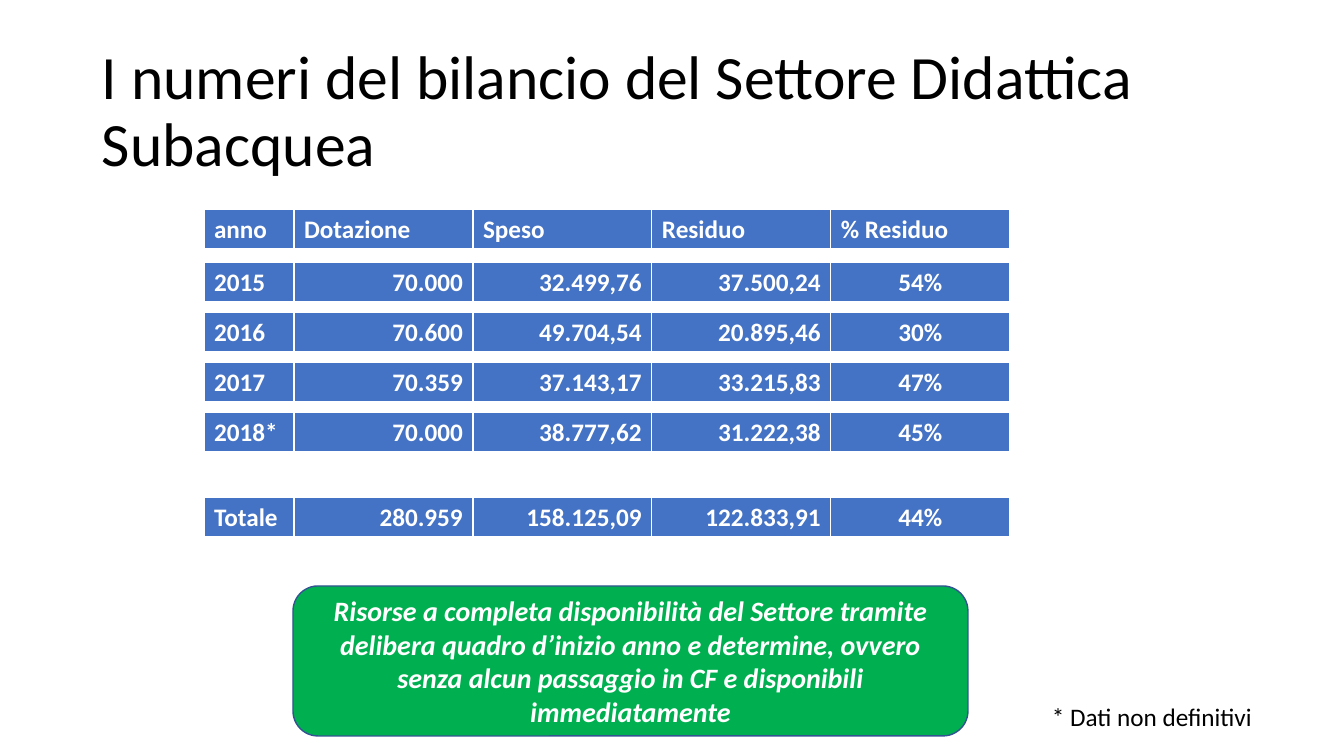
from lxml import etree
from pptx import Presentation
from pptx import util as u
from pptx.dml.color import RGBColor
from pptx.enum import shapes, text
from pptx.oxml.ns import qn

TITLE = "I numeri del bilancio del Settore Didattica Subacquea"
# top in px, cells
BUDGET_ROWS = [
    (209, ("anno", "Dotazione", "Speso", "Residuo", "% Residuo")),
    (262, ("2015", "70.000", "32.499,76", "37.500,24", "54%")),
    (312, ("2016", "70.600", "49.704,54", "20.895,46", "30%")),
    (362, ("2017", "70.359", "37.143,17", "33.215,83", "47%")),
    (412, ("2018*", "70.000", "38.777,62", "31.222,38", "45%")),
    (497, ("Totale", "280.959", "158.125,09", "122.833,91", "44%")),
]
CALLOUT = ("Risorse a completa disponibilità del Settore tramite delibera quadro "
           "d’inizio anno e determine, ovvero senza alcun passaggio in CF e "
           "disponibili immediatamente")
FOOTNOTE = "* Dati non definitivi"

LEFT, CENTER, RIGHT = (text.PP_ALIGN.LEFT, text.PP_ALIGN.CENTER,
                       text.PP_ALIGN.RIGHT)
HEADER_ALIGN = [LEFT] * 5
VALUE_ALIGN = [LEFT, RIGHT, RIGHT, RIGHT, CENTER]
TABLE_LEFT, ROW_HEIGHT = 204, 41
COL_WIDTHS = [90] + [179] * 4
BORDERS = {"a:lnL": 1, "a:lnR": 1, "a:lnT": 1, "a:lnB": 3}

BLACK, WHITE, BLUE, GREEN, EDGE = "000000", "FFFFFF", "4472C4", "00B050", "325491"
SCALE = u.Inches(1) / 100.8


def px(*lengths):
    return [u.Emu(round(n * SCALE)) for n in lengths]


def rgb(value):
    return RGBColor.from_string(value)


def write(tf, content, color, align=LEFT, spacing=None, **font):
    p = tf.paragraphs[0]
    p.alignment = align
    if spacing:
        p.line_spacing = spacing
    r = p.add_run()
    r.text = content
    r.font.color.rgb = rgb(color)
    for name, value in {"name": "Calibri", "size": u.Pt(18), **font}.items():
        setattr(r.font, name, value)


def add_borders(cell):
    tc_pr = cell._tc.get_or_add_tcPr()
    for i, (tag, width) in enumerate(BORDERS.items()):
        ln = etree.Element(qn(tag), w=str(u.Pt(width)))
        fill = etree.SubElement(ln, qn("a:solidFill"))
        etree.SubElement(fill, qn("a:srgbClr"), val=WHITE)
        tc_pr.insert(i, ln)


def add_budget_row(slide, top, values, aligns):
    frame = slide.shapes.add_table(
        1, len(values), *px(TABLE_LEFT, top, sum(COL_WIDTHS), ROW_HEIGHT))
    table = frame.table
    table.horz_banding = False
    for column, width in zip(table.columns, px(*COL_WIDTHS)):
        column.width = width
    for cell, value, align in zip(table.rows[0].cells, values, aligns):
        cell.fill.solid()
        cell.fill.fore_color.rgb = rgb(BLUE)
        add_borders(cell)
        write(cell.text_frame, value, WHITE, align, bold=True)


def main():
    prs = Presentation()
    prs.slide_width, prs.slide_height = px(1344, 756)
    slide = prs.slides.add_slide(prs.slide_layouts[6])

    tf = slide.shapes.add_textbox(*px(92, 40, 1159, 146)).text_frame
    tf.word_wrap = True
    tf.vertical_anchor = text.MSO_ANCHOR.MIDDLE
    write(tf, TITLE, BLACK, spacing=0.9, size=u.Pt(44))

    for i, (top, values) in enumerate(BUDGET_ROWS):
        add_budget_row(slide, top, values, VALUE_ALIGN if i else HEADER_ALIGN)

    tf = slide.shapes.add_textbox(*px(1042, 696, 224, 40)).text_frame
    tf.word_wrap = False
    tf.auto_size = text.MSO_AUTO_SIZE.SHAPE_TO_FIT_TEXT
    write(tf, FOOTNOTE, BLACK)

    sp = slide.shapes.add_shape(shapes.MSO_SHAPE.ROUNDED_RECTANGLE,
                                *px(293, 586, 675, 150))
    sp.shadow.inherit = False
    sp.fill.solid()
    sp.fill.fore_color.rgb = rgb(GREEN)
    sp.line.color.rgb = rgb(EDGE)
    sp.line.width = u.Pt(1)
    tf = sp.text_frame
    tf.word_wrap = True
    tf.vertical_anchor = text.MSO_ANCHOR.MIDDLE
    write(tf, CALLOUT, WHITE, CENTER, size=u.Pt(20), bold=True, italic=True)

    prs.save("out.pptx")


if __name__ == "__main__":
    main()
